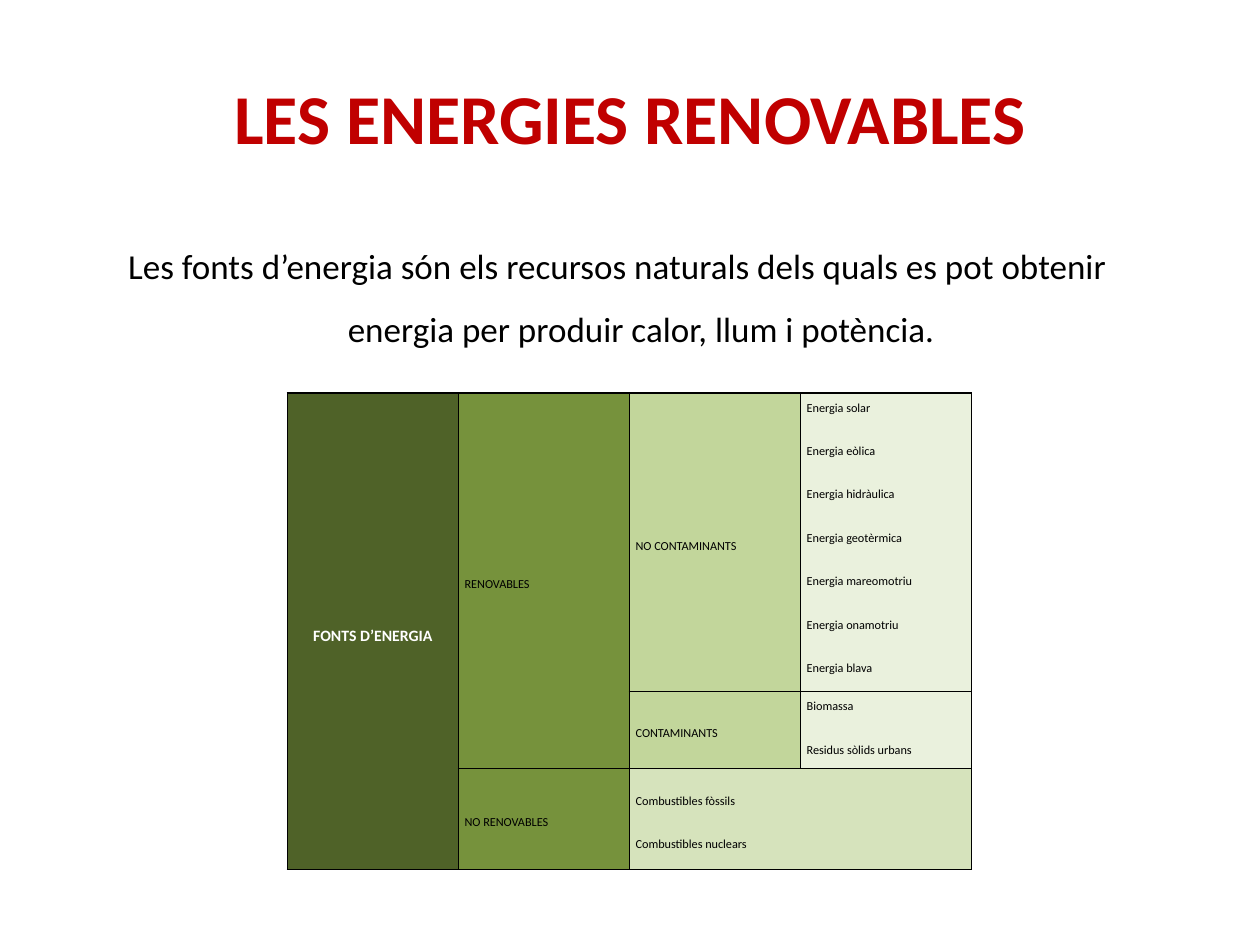
from lxml import etree
from pptx import Presentation
from pptx import util as u
from pptx.dml.color import RGBColor
from pptx.enum import text
from pptx.oxml.ns import qn

ALIGN = text.PP_ALIGN
MIDDLE = text.MSO_ANCHOR.MIDDLE
TOP = text.MSO_ANCHOR.TOP


def color(value):
    return RGBColor.from_string(value)


class SlideBuilder:
    font = "Calibri"
    black = "000000"
    red = "C00000"

    def __init__(self, presentation):
        self.width = presentation.slide_width
        self.height = presentation.slide_height
        self.slide = presentation.slides.add_slide(presentation.slide_layouts[1])

    def box(self, left, top, width, height):
        return (int(left * self.width), int(top * self.height),
                int(width * self.width), int(height * self.height))

    def place(self, shape, *shares):
        shape.left, shape.top, shape.width, shape.height = self.box(*shares)

    def set_lines(self, frame, lines, size, fill, align, bold=False, spacing=1.0, gap=0):
        frame.text = "\n".join(lines)
        for index, paragraph in enumerate(frame.paragraphs):
            paragraph.alignment = align
            paragraph.line_spacing = spacing
            paragraph.space_before = u.Pt(gap if index else 0)
            paragraph.space_after = u.Pt(gap)
            for run in paragraph.runs:
                run.font.name = self.font
                run.font.size = u.Pt(size)
                run.font.bold = bold
                run.font.color.rgb = color(fill)

    def title(self, line, *shares):
        shape = self.slide.shapes.title
        self.place(shape, *shares)
        frame = shape.text_frame
        frame.auto_size = text.MSO_AUTO_SIZE.NONE
        frame.vertical_anchor = MIDDLE
        self.set_lines(frame, [line], 40, self.red, ALIGN.CENTER, bold=True)

    def body(self, line, *shares):
        shape = self.slide.placeholders[1]
        self.place(shape, *shares)
        frame = shape.text_frame
        frame.auto_size = text.MSO_AUTO_SIZE.NONE
        self.set_lines(frame, [line], 20, self.black, ALIGN.CENTER, spacing=1.5)
        properties = frame.paragraphs[0]._p.get_or_add_pPr()
        properties.set("marL", str(u.Inches(0.38)))
        properties.set("indent", str(u.Inches(-0.38)))
        etree.SubElement(properties, qn("a:buNone"))

    def table(self, row_heights, column_count, *shares):
        frame = self.slide.shapes.add_table(len(row_heights), column_count, *self.box(*shares))
        table = frame.table
        table.first_row = table.horz_banding = False
        for row, height in zip(table.rows, row_heights):
            row.height = u.Inches(height)
        for cell in table.iter_cells():
            cell.fill.background()
            self.border(cell)
        return table

    def border(self, cell):
        properties = cell._tc.get_or_add_tcPr()
        for index, side in enumerate(("lnL", "lnR", "lnT", "lnB")):
            line = etree.Element(qn(f"a:{side}"), w=str(u.Pt(1)))
            fill = etree.SubElement(line, qn("a:solidFill"))
            etree.SubElement(fill, qn("a:srgbClr"), val=self.black)
            properties.insert(index, line)

    def cell(self, table, row, column, lines, fill, span=(1, 1), anchor=MIDDLE,
             align=ALIGN.LEFT, size=7, ink=black, bold=False, gap=18):
        cell = table.cell(row, column)
        if span != (1, 1):
            cell.merge(table.cell(row + span[0] - 1, column + span[1] - 1))
        cell.fill.solid()
        cell.fill.fore_color.rgb = color(fill)
        cell.margin_left = cell.margin_right = u.Inches(0.05)
        cell.margin_top = cell.margin_bottom = 0
        cell.vertical_anchor = anchor
        self.set_lines(cell.text_frame, lines, size, ink, align, bold, 1.5, gap)


def main():
    presentation = Presentation()
    presentation.slide_width, presentation.slide_height = u.Inches(10), u.Inches(7.5)
    builder = SlideBuilder(presentation)
    builder.title("LES ENERGIES RENOVABLES", 0.05, 0.04, 0.9, 1 / 6)
    builder.body("Les fonts d’energia són els recursos naturals dels quals es pot obtenir "
                 "energia per produir calor, llum i potència.", 0.05, 0.23, 0.88, 0.16)

    table = builder.table([2.37, 0.61, 0.8], 4, 0.228, 0.416, 0.543, 0.504)
    builder.cell(table, 0, 0, ["FONTS D’ENERGIA"], "4F6228", span=(3, 1),
                 align=ALIGN.CENTER, size=9, ink="FFFFFF", bold=True)
    builder.cell(table, 0, 1, ["RENOVABLES"], "76923C", span=(2, 1))
    builder.cell(table, 2, 1, ["NO RENOVABLES"], "76923C")
    builder.cell(table, 2, 2, ["Combustibles fòssils", "Combustibles nuclears"],
                 "D6E3BC", span=(1, 2), gap=6)

    groups = [
        ("NO CONTAMINANTS", ["Energia solar", "Energia eòlica", "Energia hidràulica",
                             "Energia geotèrmica", "Energia mareomotriu",
                             "Energia onamotriu", "Energia blava"]),
        ("CONTAMINANTS", ["Biomassa", "Residus sòlids urbans"]),
    ]
    for row, (group, sources) in enumerate(groups):
        builder.cell(table, row, 2, [group], "C2D69B")
        builder.cell(table, row, 3, sources, "EAF1DD", anchor=TOP, align=ALIGN.JUSTIFY, gap=6)

    presentation.save("out.pptx")


if __name__ == "__main__":
    main()
